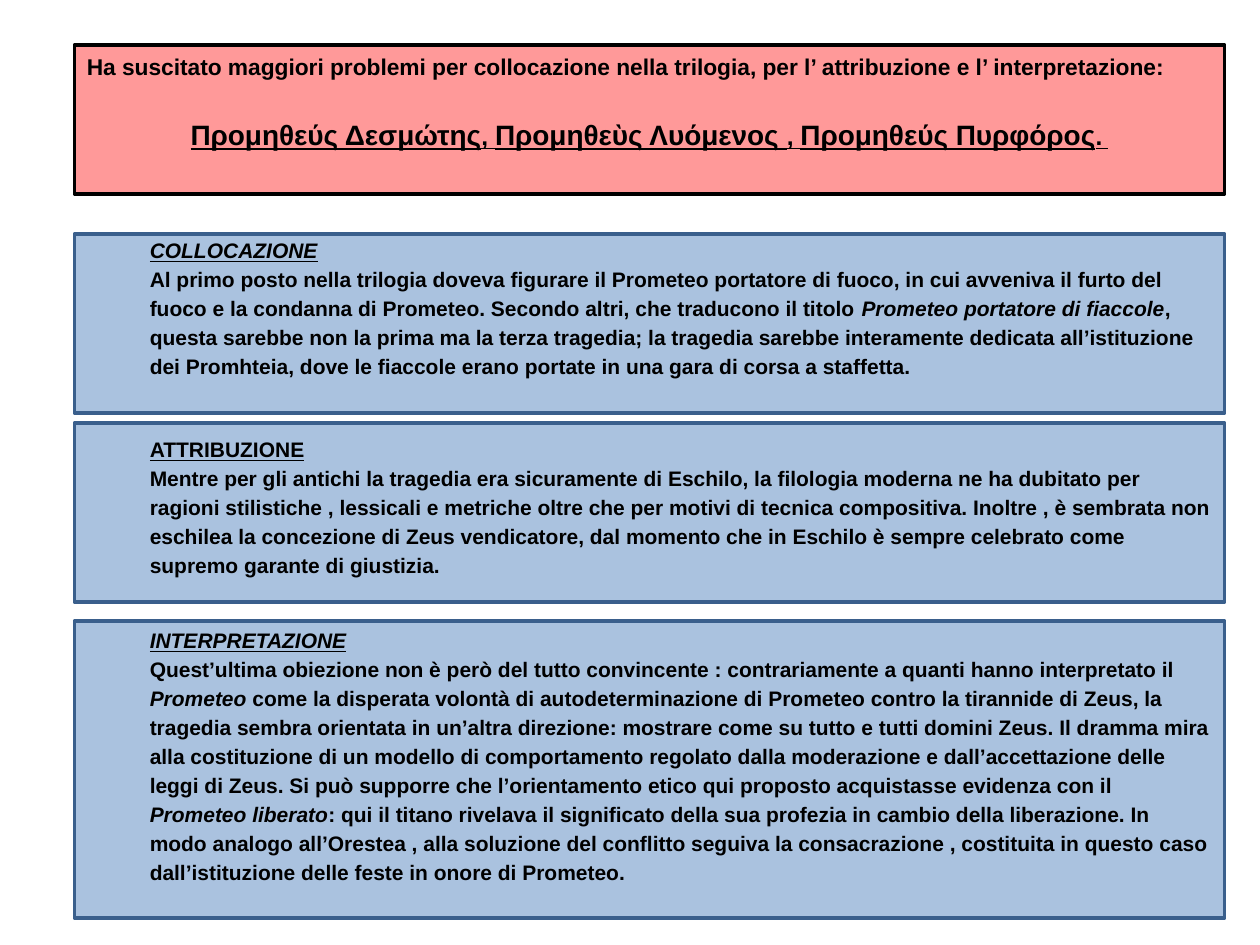
import pptx
import pptx.dml.color
import pptx.enum.shapes
import pptx.enum.text
import pptx.oxml.xmlchemy
import pptx.util
import lxml.etree
from pptx.oxml.ns import qn

Cm = pptx.util.Cm
Pt = pptx.util.Pt

COLOURS = {
    "title": "FF0000",
    "panel": "4F81BD",
    "panel_line": "3A5F8C",
    "text": "000000",
}

SECTIONS = [
    (4.72, 3.61, 0, "COLLOCAZIONE", "biu", [
        ("Al primo posto nella trilogia doveva figurare il Prometeo portatore di fuoco, in cui avveniva il furto del "
         "fuoco e la condanna di Prometeo. Secondo altri, che traducono il titolo ", "b"),
        ("Prometeo portatore di fiaccole", "bi"),
        (", questa sarebbe non la prima ma la terza tragedia; la tragedia sarebbe interamente dedicata "
         "all’istituzione dei Promhteia, dove le fiaccole erano portate in una gara di corsa a staffetta.", "b"),
    ]),
    (8.53, 3.61, 0.2, "ATTRIBUZIONE", "bu", [
        ("Mentre per gli antichi la tragedia era sicuramente di Eschilo, la filologia moderna ne ha dubitato per "
         "ragioni stilistiche , lessicali e metriche oltre che per motivi di tecnica compositiva. Inoltre , è "
         "sembrata non eschilea la concezione di Zeus vendicatore, dal momento che in Eschilo è sempre celebrato "
         "come supremo garante di giustizia.", "b"),
    ]),
    (12.52, 5.99, 0.06, "INTERPRETAZIONE", "biu", [
        ("Quest’ultima obiezione non è però del tutto convincente : contrariamente a quanti hanno interpretato il ",
         "b"),
        ("Prometeo", "bi"),
        (" come la disperata volontà di autodeterminazione di Prometeo contro la tirannide di Zeus, la tragedia "
         "sembra orientata in un’altra direzione: mostrare come su tutto e tutti domini Zeus. Il dramma mira alla "
         "costituzione di un modello di comportamento regolato dalla moderazione e dall’accettazione delle leggi "
         "di Zeus. Si può supporre che l’orientamento etico qui proposto acquistasse evidenza con il ", "b"),
        ("Prometeo liberato", "bi"),
        (": qui il titano rivelava il significato della sua profezia in cambio della liberazione. In modo analogo "
         "all’Orestea , alla soluzione del conflitto seguiva la consacrazione , costituita in questo caso "
         "dall’istituzione delle feste in onore di Prometeo.", "b"),
    ]),
]


class Page:
    """Holds the text style and the slide being built."""

    font = "Arial"
    left, width = Cm(1.5), Cm(23.19)
    line_width = Pt(2)
    line_spacing = 1.15

    def __init__(self, deck):
        self.slide = deck.slides.add_slide(deck.slide_layouts[6])

    def colour(self, name):
        return pptx.dml.color.RGBColor.from_string(COLOURS[name])

    def panel(self, top, height, inset, fill, opacity, line):
        box = self.slide.shapes.add_shape(
            pptx.enum.shapes.MSO_SHAPE.RECTANGLE, self.left, Cm(top), self.width, Cm(height))
        box.shadow.inherit = False
        box.fill.solid()
        box.fill.fore_color.rgb = self.colour(fill)
        tint = box.fill._xPr.find(qn("a:solidFill"))[0]
        lxml.etree.SubElement(tint, qn("a:alpha")).set("val", str(opacity * 1000))
        box.line.color.rgb = self.colour(line)
        box.line.width = self.line_width
        frame = box.text_frame
        frame.word_wrap = True
        frame.vertical_anchor = pptx.enum.text.MSO_ANCHOR.TOP
        frame.margin_top = Cm(inset)
        return frame

    def paragraph(self, para, spans, margin, indent=0, align="LEFT", before=0):
        para.alignment = getattr(pptx.enum.text.PP_ALIGN, align)
        para.line_spacing = self.line_spacing
        if before:
            para.space_before = Pt(before)
        properties = para._p.get_or_add_pPr()
        properties.set("marL", str(Cm(margin)))
        properties.set("indent", str(Cm(indent)))
        for text, style, size, font in spans:
            span = para.add_run()
            span.text = text
            span.font.name = font
            span.font.size = Pt(size)
            span.font.bold = "b" in style
            span.font.italic = "i" in style
            span.font.underline = "u" in style
            span.font.color.rgb = self.colour("text")

    def title(self, intro, works):
        frame = self.panel(0.91, 3, 0.08, "title", 40, "text")
        self.paragraph(frame.paragraphs[0], [(intro, "b", 13, self.font)], 0.97, -0.97)
        spans = [(text, "bu", size, font) for text, size, font in works]
        self.paragraph(frame.add_paragraph(), spans, 0.97, -0.97, "CENTER", 18.5)

    def section(self, top, height, inset, heading, style, body):
        frame = self.panel(top, height, inset, "panel", 48, "panel_line")
        self.paragraph(frame.paragraphs[0], [(heading, style, 12, self.font)], 1.27)
        spans = [(text, flags, 12, self.font) for text, flags in body]
        self.paragraph(frame.add_paragraph(), spans, 1.27)


def main():
    deck = pptx.Presentation()
    deck.slide_width, deck.slide_height = Cm(25.4), Cm(19.05)
    page = Page(deck)
    page.title(
        "Ha suscitato maggiori problemi per collocazione nella trilogia, per l’ attribuzione e l’ interpretazione:",
        [
            ("Προμηθεύς Δεσμώτης", 16, "Arial"),
            (", ", 14, "Arial"),
            ("Προμηθεὺς Λυόμενος ", 16, "Arial"),
            (", ", 14, "Arial"),
            ("Προμηθεύς Πυρφόρος", 16, "Arial"),
            (".", 14, "Arial"),
            (" ", 14, "Times New Roman"),
        ])
    for section in SECTIONS:
        page.section(*section)
    deck.save("out.pptx")


if __name__ == "__main__":
    main()
